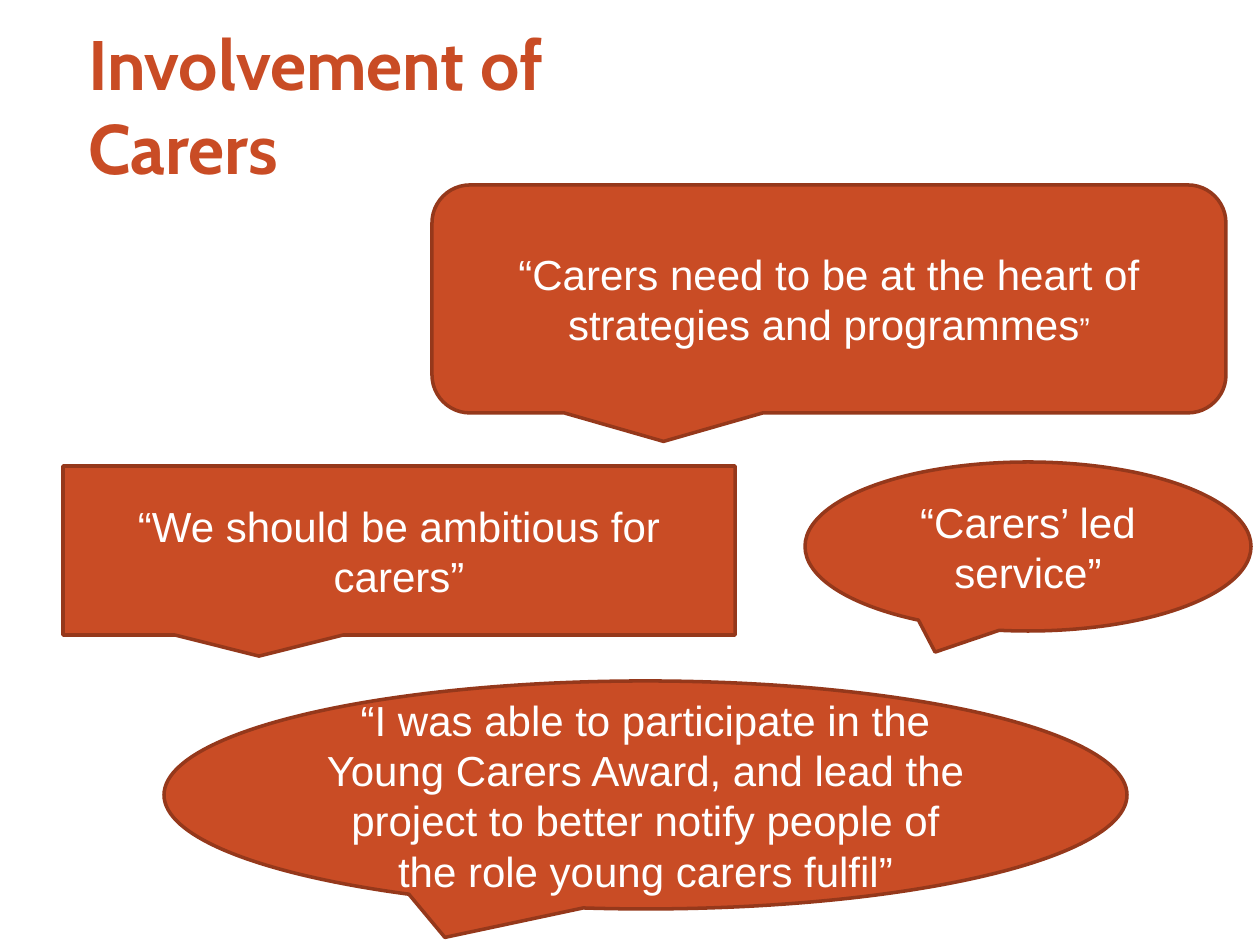
from pptx import Presentation
from pptx.dml.color import RGBColor
from pptx.enum.shapes import MSO_SHAPE
from pptx.enum.text import MSO_ANCHOR, MSO_AUTO_SIZE, PP_ALIGN
from pptx.util import Pt

PX = 914400 / 126
TITLE_ONLY = 5
ROUNDED = MSO_SHAPE.ROUNDED_RECTANGULAR_CALLOUT
RECTANGLE = MSO_SHAPE.RECTANGULAR_CALLOUT
OVAL = MSO_SHAPE.OVAL_CALLOUT
MIDDLE = MSO_ANCHOR.MIDDLE
NO_AUTOFIT = MSO_AUTO_SIZE.NONE
LEFT, CENTER = PP_ALIGN.LEFT, PP_ALIGN.CENTER

COLORS = {"orange": "C94C25", "outline": "95381B", "white": "FFFFFF"}

# Each quote: callout shape, box (left, top, width, height), runs of (text, size)
QUOTES = [
    (ROUNDED, (432, 185, 794, 228),
     [("“Carers need to be at the heart of strategies and programmes", 24), ("”", 18)]),
    (RECTANGLE, (63, 466, 672, 169),
     [("“We should be ambitious for carers”", 24)]),
    (OVAL, (164, 681, 963, 228),
     [("“I was able to participate in the Young Carers Award, and lead the project "
       "to better notify people of the role young carers fulfil”", 24)]),
    (OVAL, (805, 462, 446, 169),
     [("“Carers’ led service”", 24)]),
]


def px(length):
    return round(length * PX)


def color(name):
    return RGBColor.from_string(COLORS[name])


def write(frame, runs, font="Arial", ink="white", bold=False, align=CENTER, indent=0):
    """Fill a text frame with one paragraph made of (text, size) runs."""
    frame.word_wrap = True
    frame.auto_size = NO_AUTOFIT
    frame.vertical_anchor = MIDDLE
    paragraph = frame.paragraphs[0]
    paragraph.alignment = align
    if indent:
        properties = paragraph._p.get_or_add_pPr()
        properties.set("marL", str(px(indent)))
        properties.set("indent", "0")
    for text, size in runs:
        run = paragraph.add_run()
        run.text = text
        run.font.name = font
        run.font.size = Pt(size)
        run.font.bold = bold
        run.font.color.rgb = color(ink)


def place_title(slide, box):
    title = slide.shapes.title
    title.left, title.top, title.width, title.height = map(px, box)
    frame = title.text_frame
    frame.margin_left = frame.margin_right = 0
    write(frame, [("Involvement of Carers", 40)], font="Cabin", ink="orange",
          bold=True, align=LEFT, indent=25)


def add_quote(slide, callout, box, runs):
    bubble = slide.shapes.add_shape(callout, *map(px, box))
    bubble.shadow.inherit = False
    bubble.fill.solid()
    bubble.fill.fore_color.rgb = color("orange")
    bubble.line.color.rgb = color("outline")
    bubble.line.width = Pt(2)
    write(bubble.text_frame, runs)


def main():
    deck = Presentation()
    deck.slide_width, deck.slide_height = px(1260), px(945)
    slide = deck.slides.add_slide(deck.slide_layouts[TITLE_ONLY])
    place_title(slide, (63, 50, 672, 110))
    for callout, box, runs in QUOTES:
        add_quote(slide, callout, box, runs)
    deck.save("out.pptx")


if __name__ == "__main__":
    main()
